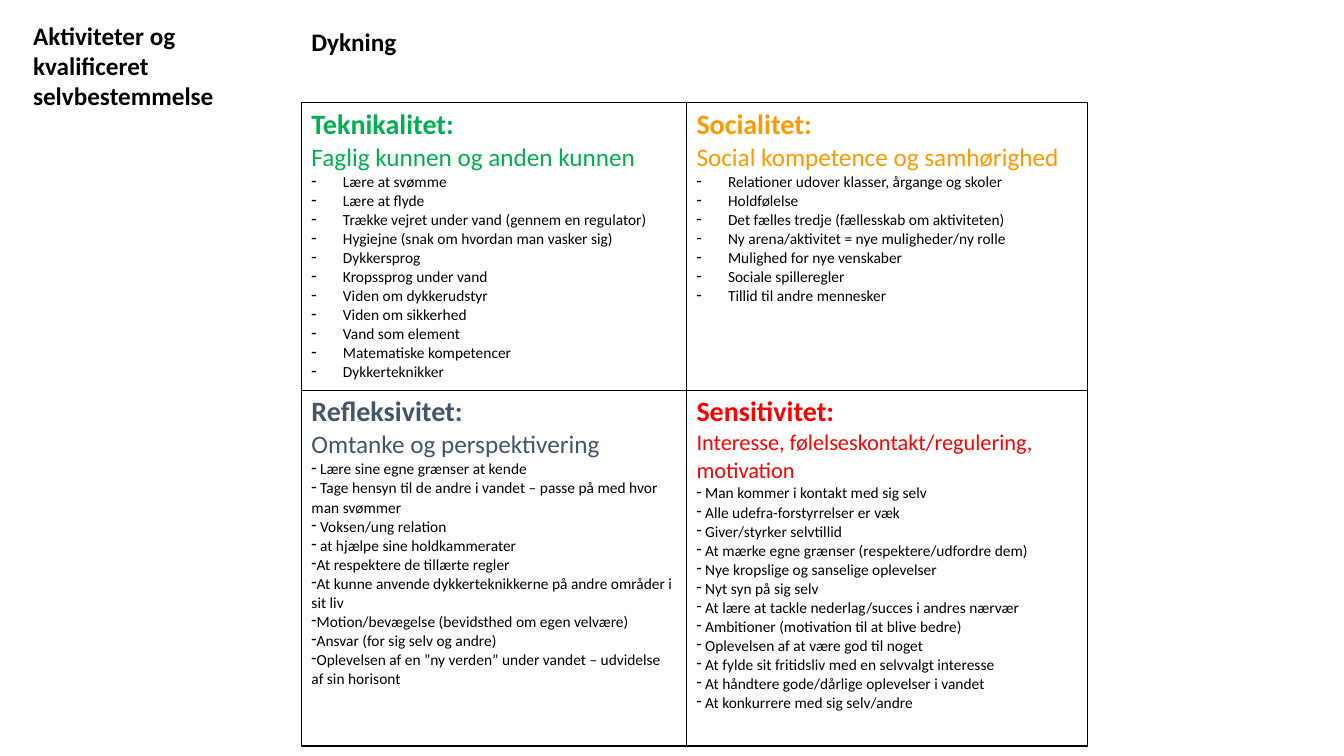
from dataclasses import dataclass

from lxml import etree
from pptx import Presentation
from pptx import util as u
from pptx.dml import color
from pptx.enum import text
from pptx.oxml import ns

FONT = "Calibri"
BLACK = "000000"
BORDER_SIDES = ("lnL", "lnR", "lnT", "lnB")


@dataclass
class Heading:
    wording: str
    left: float
    top: float
    width: float
    height: float


@dataclass
class Quadrant:
    title: str
    subtitle: str
    hue: str
    points: list[str]
    subtitle_size: int = 18
    hanging: float = 0


HEADINGS = [
    Heading("Aktiviteter og kvalificeret\nselvbestemmelse", 16.56, 10.8, 167.76, 72.72),
    Heading("Dykning", 215.28, 15.12, 95.76, 28.8),
]

QUADRANTS = [
    [
        Quadrant("Teknikalitet:", "Faglig kunnen og anden kunnen", "00B050", [
            "Lære at svømme",
            "Lære at flyde",
            "Trække vejret under vand (gennem en regulator)",
            "Hygiejne (snak om hvordan man vasker sig)",
            "Dykkersprog",
            "Kropssprog under vand",
            "Viden om dykkerudstyr",
            "Viden om sikkerhed",
            "Vand som element",
            "Matematiske kompetencer",
            "Dykkerteknikker",
        ], hanging=22.5),
        Quadrant("Socialitet:", "Social kompetence og samhørighed", "FF9900", [
            "Relationer udover klasser, årgange og skoler",
            "Holdfølelse",
            "Det fælles tredje (fællesskab om aktiviteten)",
            "Ny arena/aktivitet = nye muligheder/ny rolle",
            "Mulighed for nye venskaber",
            "Sociale spilleregler",
            "Tillid til andre mennesker",
        ], hanging=22.5),
    ],
    [
        Quadrant("Refleksivitet:", "Omtanke og perspektivering", "44546A", [
            " Lære sine egne grænser at kende",
            " Tage hensyn til de andre i vandet – passe på med hvor man svømmer",
            " Voksen/ung relation",
            " at hjælpe sine holdkammerater",
            "At respektere de tillærte regler",
            "At kunne anvende dykkerteknikkerne på andre områder i sit liv",
            "Motion/bevægelse (bevidsthed om egen velvære)",
            "Ansvar (for sig selv og andre)",
            "Oplevelsen af en ”ny verden” under vandet – udvidelse af sin horisont",
        ]),
        Quadrant("Sensitivitet:", "Interesse, følelseskontakt/regulering, motivation", "FF0000", [
            " Man kommer i kontakt med sig selv",
            " Alle udefra-forstyrrelser er væk",
            " Giver/styrker selvtillid",
            " At mærke egne grænser (respektere/udfordre dem)",
            " Nye kropslige og sanselige oplevelser",
            " Nyt syn på sig selv",
            " At lære at tackle nederlag/succes i andres nærvær",
            " Ambitioner (motivation til at blive bedre)",
            " Oplevelsen af at være god til noget",
            " At fylde sit fritidsliv med en selvvalgt interesse",
            " At håndtere gode/dårlige oplevelser i vandet",
            " At konkurrere med sig selv/andre",
        ], subtitle_size=16),
    ],
]

COLUMN_WIDTHS = (275.04, 286.56)
ROW_HEIGHTS = (205.2, 254.16)


def rgb(hex_code: str) -> color.RGBColor:
    return color.RGBColor.from_string(hex_code)


def add_run(paragraph, wording: str, size: float, hue: str, bold: bool = False) -> None:
    run = paragraph.add_run()
    run.text = wording
    run.font.name = FONT
    run.font.size = u.Pt(size)
    run.font.bold = bold
    run.font.color.rgb = rgb(hue)


def add_dash(paragraph, hanging: float) -> None:
    """Give the paragraph a dash bullet, with the text indented by hanging."""
    properties = paragraph._p.get_or_add_pPr()
    properties.set("marL", str(u.Pt(hanging)))
    properties.set("indent", str(-u.Pt(hanging)))
    etree.SubElement(properties, ns.qn("a:buFontTx"))
    etree.SubElement(properties, ns.qn("a:buChar")).set("char", "-")


def add_borders(cell) -> None:
    properties = cell._tc.get_or_add_tcPr()
    for position, side in enumerate(BORDER_SIDES):
        line = etree.Element(ns.qn(f"a:{side}"), w=str(u.Pt(1)))
        fill = etree.SubElement(line, ns.qn("a:solidFill"))
        etree.SubElement(fill, ns.qn("a:srgbClr")).set("val", BLACK)
        properties.insert(position, line)


def add_heading(slide, heading: Heading) -> None:
    box = slide.shapes.add_textbox(u.Pt(heading.left), u.Pt(heading.top),
                                   u.Pt(heading.width), u.Pt(heading.height))
    frame = box.text_frame
    frame.word_wrap = True
    frame.auto_size = text.MSO_AUTO_SIZE.SHAPE_TO_FIT_TEXT
    paragraph = frame.paragraphs[0]
    for number, line in enumerate(heading.wording.split("\n")):
        if number:
            paragraph.add_line_break()
        add_run(paragraph, line, 18, BLACK, bold=True)


def fill_quadrant(cell, quadrant: Quadrant) -> None:
    cell.fill.background()
    add_borders(cell)
    frame = cell.text_frame
    add_run(frame.paragraphs[0], quadrant.title, 20, quadrant.hue, bold=True)
    add_run(frame.add_paragraph(), quadrant.subtitle, quadrant.subtitle_size, quadrant.hue)
    for point in quadrant.points:
        paragraph = frame.add_paragraph()
        add_dash(paragraph, quadrant.hanging)
        add_run(paragraph, point, 11, BLACK)


def add_matrix(slide) -> None:
    matrix = slide.shapes.add_table(
        len(ROW_HEIGHTS), len(COLUMN_WIDTHS), u.Pt(215.28), u.Pt(73.44),
        u.Pt(sum(COLUMN_WIDTHS)), u.Pt(sum(ROW_HEIGHTS))).table
    matrix.first_row = False
    matrix.horz_banding = False
    for column, width in zip(matrix.columns, COLUMN_WIDTHS):
        column.width = u.Pt(width)
    for row, height, quadrants in zip(matrix.rows, ROW_HEIGHTS, QUADRANTS):
        row.height = u.Pt(height)
        for cell, quadrant in zip(row.cells, quadrants):
            fill_quadrant(cell, quadrant)


def main() -> None:
    deck = Presentation()
    deck.slide_width = u.Pt(960)
    deck.slide_height = u.Pt(540)
    slide = deck.slides.add_slide(deck.slide_layouts[6])
    add_matrix(slide)
    for heading in HEADINGS:
        add_heading(slide, heading)
    deck.save("out.pptx")


if __name__ == "__main__":
    main()
